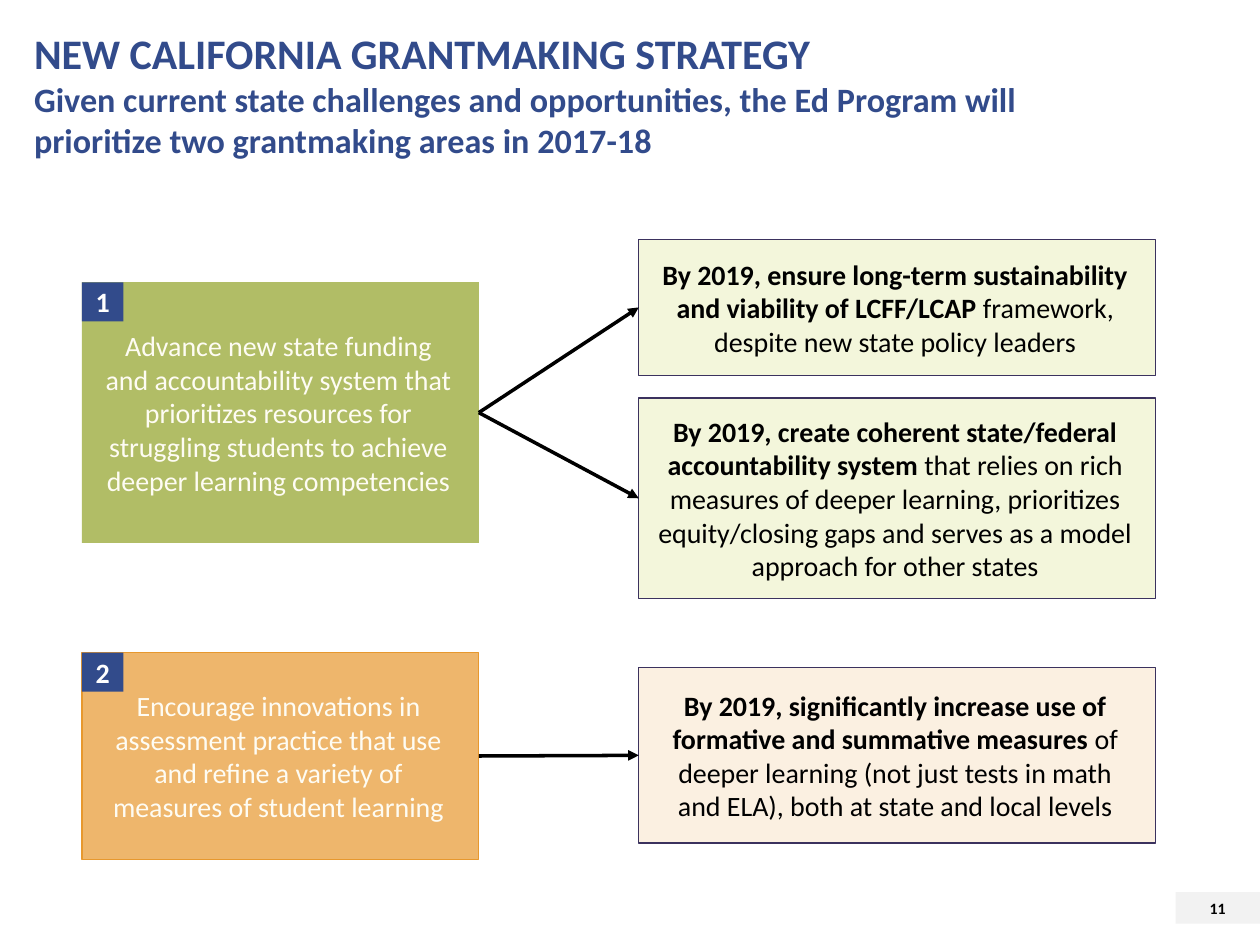
from lxml import etree
from pptx import Presentation
from pptx.dml.color import RGBColor
from pptx.enum.shapes import MSO_CONNECTOR, MSO_SHAPE
from pptx.enum.text import MSO_ANCHOR, MSO_AUTO_SIZE, PP_ALIGN
from pptx.oxml.ns import qn
from pptx.util import Inches, Pt

RECTANGLE = MSO_SHAPE.RECTANGLE
STRAIGHT = MSO_CONNECTOR.STRAIGHT
LEFT, CENTER = PP_ALIGN.LEFT, PP_ALIGN.CENTER
TOP, MIDDLE = MSO_ANCHOR.TOP, MSO_ANCHOR.MIDDLE
LEFT_SIDE, RIGHT_SIDE = 1, 3

COLORS = {
    "navy": "324B8B", "green": "91A226", "orange": "E7982E",
    "pale_green": "EEF3CD", "pale_orange": "FAEAD5", "outline": "3B325E",
    "cream": "FEFCF3", "white": "FFFFFF", "black": "000000", "gray": "F2F2F2",
}


def write(shape, paragraphs, color="black", align=CENTER, anchor=MIDDLE,
          insets=(0.09, 0.09, 0.18, 0.09), indent=0):
    """Fill a shape with paragraphs, each a list of (text, size, bold) runs."""
    frame = shape.text_frame
    frame.word_wrap = True
    frame.auto_size = MSO_AUTO_SIZE.NONE
    frame.vertical_anchor = anchor
    (frame.margin_left, frame.margin_top,
     frame.margin_right, frame.margin_bottom) = map(Inches, insets)
    for i, runs in enumerate(paragraphs):
        paragraph = frame.add_paragraph() if i else frame.paragraphs[0]
        paragraph.alignment = align
        paragraph.space_before = Pt(0)
        if indent:
            paragraph._p.get_or_add_pPr().set("marL", str(Inches(indent)))
        for text, size, bold in runs:
            run = paragraph.add_run()
            run.text = text
            run.font.name = "Calibri"
            run.font.size = Pt(size)
            run.font.bold = bold
            run.font.color.rgb = RGBColor.from_string(COLORS[color])


def add_box(left, top, width, height, fill, line=None, opacity=100):
    box = slide.shapes.add_shape(
        RECTANGLE, Inches(left), Inches(top), Inches(width), Inches(height))
    box.shadow.inherit = False
    box.fill.solid()
    box.fill.fore_color.rgb = RGBColor.from_string(COLORS[fill])
    if opacity < 100:
        rgb = box.fill._xPr.find(qn("a:solidFill"))[0]
        etree.SubElement(rgb, qn("a:alpha"), val=str(opacity * 1000))
    if line:
        box.line.color.rgb = RGBColor.from_string(COLORS[line])
        box.line.width = Pt(0.75)
    else:
        box.line.fill.background()
    return box


prs = Presentation()
prs.slide_width, prs.slide_height = Inches(10), Inches(7.5)
slide = prs.slides.add_slide(prs.slide_layouts[5])

page_number = add_box(9.33, 7.08, 0.67, 0.25, "gray")
write(page_number, [[("11", 9, True)]], insets=(0, 0, 0, 0))

title = slide.shapes.title
title.left, title.top = Inches(0.17), Inches(0.17)
title.width, title.height = Inches(9), Inches(1.08)
write(title, [
    [("NEW CALIFORNIA GRANTMAKING STRATEGY", 24, True)],
    [("Given current state challenges and opportunities, the Ed Program will "
      "prioritize two grantmaking areas in 2017-18", 19.5, True)],
], color="navy", align=LEFT, anchor=TOP, insets=(0.1, 0.05, 0.1, 0.05))

# Each area: top, height, fill, line, text, goal fill, goals.
# Each goal: top, height, bold lead, remainder.
areas = [
    (2.24, 2.07, "green", None,
     "Advance new state funding and accountability system that prioritizes "
     "resources for struggling students to achieve deeper learning competencies",
     "pale_green", [
         (1.9, 1.08,
          "By 2019, ensure long-term sustainability and viability of LCFF/LCAP ",
          "framework, despite new state policy leaders"),
         (3.16, 1.59,
          "By 2019, create coherent state/federal accountability system ",
          "that relies on rich measures of deeper learning, prioritizes "
          "equity/closing gaps and serves as a model approach for other states"),
     ]),
    (5.18, 1.64, "orange", "orange",
     "Encourage innovations in assessment practice that use and refine a "
     "variety of measures of student learning",
     "pale_orange", [
         (5.3, 1.39,
          "By 2019, significantly increase use of formative and summative measures ",
          "of deeper learning (not just tests in math and ELA), both at state "
          "and local levels"),
     ]),
]

for number, (top, height, fill, line, text, goal_fill, goals) in enumerate(areas, 1):
    area = add_box(0.65, top, 3.15, height, fill, line, opacity=70)
    write(area, [[(text, 16, False)]], color="cream", indent=0.06)
    badge = add_box(0.65, top, 0.33, 0.31, "navy")
    write(badge, [[(str(number), 16, True)]], color="white", insets=(0, 0, 0, 0))

    for goal_top, goal_height, lead, remainder in goals:
        goal = add_box(5.07, goal_top, 4.1, goal_height, goal_fill, "outline", opacity=70)
        write(goal, [[(lead, 16, True), (remainder, 16, False)]], indent=0.06)

        arrow = slide.shapes.add_connector(STRAIGHT, 0, 0, 0, 0)
        arrow.begin_connect(area, RIGHT_SIDE)
        arrow.end_connect(goal, LEFT_SIDE)
        arrow.line.color.rgb = RGBColor.from_string(COLORS["black"])
        arrow.line.width = Pt(2)
        etree.SubElement(arrow.line._get_or_add_ln(), qn("a:tailEnd"), type="triangle")
        etree.SubElement(arrow._element.spPr, qn("a:effectLst"))

prs.save("out.pptx")
